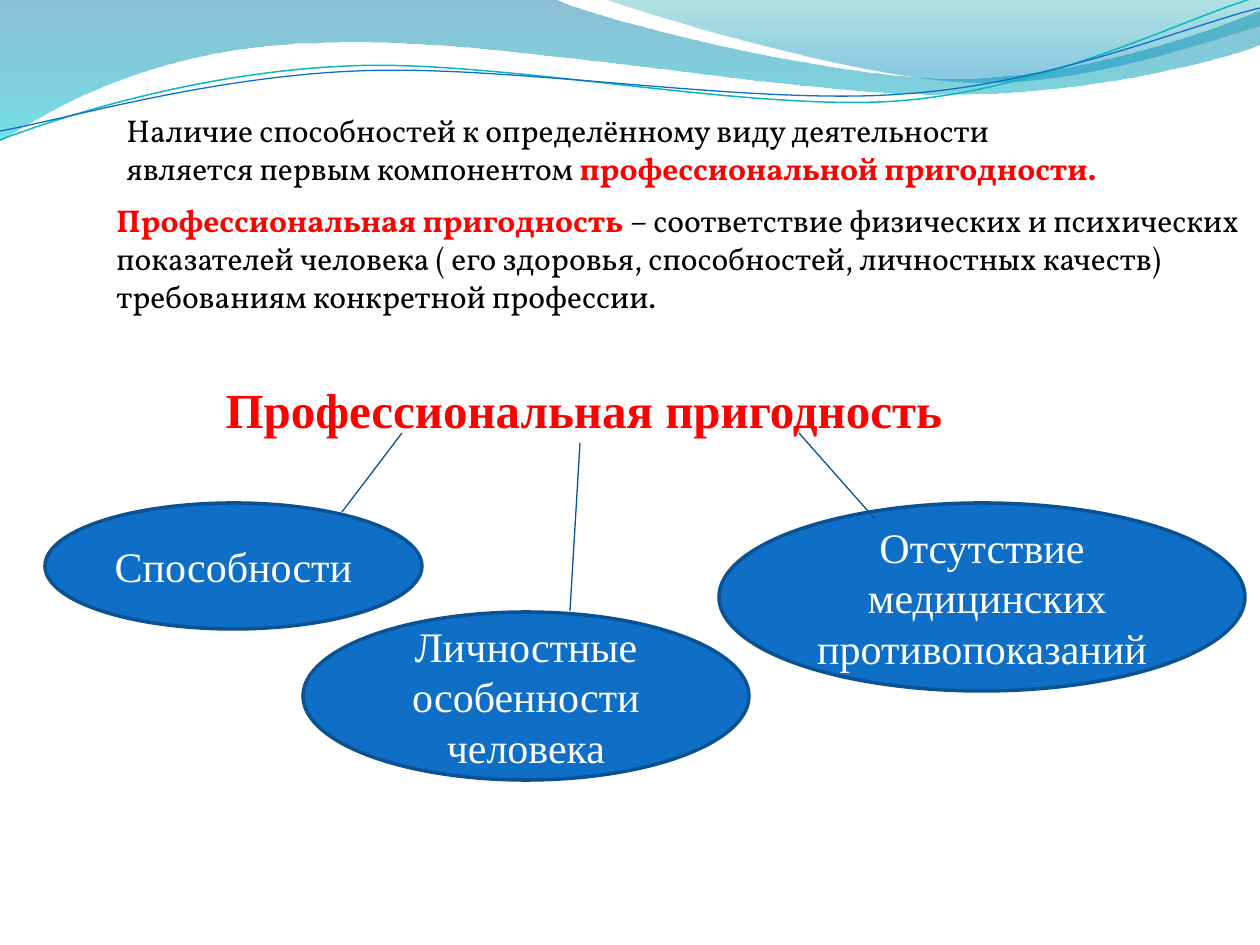
import math

import pptx
import pptx.dml.color
import pptx.enum.shapes
import pptx.enum.text
import pptx.oxml.ns
import pptx.util
from lxml import etree

PX = 914400 / 126
COLORS = {
    "ocean": "0074A1", "aqua": "00C6CF", "sea": "00A1A9", "sky": "008BBF",
    "teal": "0AB8BF", "blue": "0F6FC6", "edge": "0B5292", "link": "095295",
    "red": "FF0000", "black": "000000", "white": "FFFFFF",
}
SERIF, BODY = "Times New Roman", "Vollkorn"
TILT = 357.3


def px(n):
    """Turn px into EMU."""
    return pptx.util.Emu(round(n * PX))


def rgb(name):
    """Look up a named colour."""
    return pptx.dml.color.RGBColor.from_string(COLORS[name])


def place(sp, box):
    """Move and size a shape to a px box."""
    sp.left, sp.top, sp.width, sp.height = map(px, box)


def add_child(parent, tag, **attributes):
    """Append a drawing element with the given attributes."""
    child = etree.SubElement(parent, pptx.oxml.ns.qn("a:" + tag))
    for name, value in attributes.items():
        child.set(name, str(value))
    return child


def add_outline(s, box, steps, rotation=0):
    """Draw moves, lines and cubic curves as one freeform with the given box."""
    left, top, width, height = box
    builder = s.shapes.build_freeform(left, top, scale=PX)
    builder.add_line_segments([(left + width, top + height)], close=False)
    sp = builder.convert_to_shape()
    place(sp, box)
    sp.rotation = rotation
    sp.shadow.inherit = False
    outline = next(sp.element.spPr.iter(pptx.oxml.ns.qn("a:path")))
    outline.clear()
    outline.set("w", str(px(width)))
    outline.set("h", str(px(height)))
    angle = math.radians(-rotation)
    cos, sin = math.cos(angle), math.sin(angle)
    for tag, *values in steps:
        step = add_child(outline, tag)
        for x, y in zip(values[::2], values[1::2]):
            dx, dy = x - left - width / 2, y - top - height / 2
            add_child(step, "pt", x=px(width / 2 + dx * cos - dy * sin),
                      y=px(height / 2 + dx * sin + dy * cos))
    return sp


def add_wave(s, box, steps, stops):
    """Add a translucent wave with a downward gradient."""
    sp = add_outline(s, box, steps + [("close",)])
    sp.line.fill.background()
    sp.fill.gradient()
    sp.fill.gradient_angle = 270
    for stop, (position, color, alpha) in zip(sp.fill.gradient_stops, stops):
        stop.position = position
        stop.color.rgb = rgb(color)
    colors = sp.element.spPr.iter(pptx.oxml.ns.qn("a:srgbClr"))
    for clr, (position, color, alpha) in zip(colors, stops):
        add_child(clr, "alpha", val=alpha * 1000)


def add_curve(s, box, steps, color, width):
    """Add a thin tilted curve."""
    sp = add_outline(s, box, steps, TILT)
    sp.fill.background()
    sp.line.color.rgb = rgb(color)
    sp.line.width = pptx.util.Pt(width)


def add_header(s):
    """Add the waves and thin curves along the top."""
    add_wave(s, (-1, -1, 1263, 144), [
        ("moveTo", 0, 0),
        ("lnTo", 554, -1),
        ("cubicBezTo", 600, 21, 837, 79, 955, 79),
        ("cubicBezTo", 1075, 79, 1207, 33, 1260, 11),
        ("lnTo", 1261, 45),
        ("cubicBezTo", 1239, 55, 1096, 96, 940, 95),
        ("cubicBezTo", 784, 95, 481, 35, 324, 43),
        ("cubicBezTo", 163, 45, 58, 105, -1, 142),
        ("lnTo", 0, 0),
    ], [(0, "ocean", 45), (1, "aqua", 55)])
    add_wave(s, (604, -1, 656, 88), [
        ("moveTo", 604, -1),
        ("cubicBezTo", 642, 14, 859, 78, 969, 82),
        ("cubicBezTo", 1079, 87, 1211, 40, 1260, 26),
        ("lnTo", 1260, 0),
        ("lnTo", 604, -1),
    ], [(0, "sea", 30), (0.8, "sky", 45)])
    add_curve(s, (-3, 28, 1263, 89), [
        ("moveTo", 0, 140),
        ("cubicBezTo", 60, 117, 199, 72, 349, 66),
        ("cubicBezTo", 498, 59, 747, 112, 898, 101),
        ("cubicBezTo", 1050, 89, 1182, 19, 1257, -3),
    ], "teal", 0.85)
    add_curve(s, (-3, 38, 1264, 73), [
        ("moveTo", 0, 131),
        ("cubicBezTo", 59, 121, 207, 77, 357, 71),
        ("cubicBezTo", 508, 64, 752, 106, 903, 94),
        ("cubicBezTo", 1053, 84, 1186, 26, 1260, 8),
    ], "blue", 0.75)


def add_text(s, box, lines):
    """Add a text box of lines; each run is (text, is_key_term)."""
    tf = s.shapes.add_textbox(*map(px, box)).text_frame
    tf.word_wrap = True
    tf.auto_size = pptx.enum.text.MSO_AUTO_SIZE.SHAPE_TO_FIT_TEXT
    for i, runs in enumerate(lines):
        p = tf.paragraphs[0] if i == 0 else tf.add_paragraph()
        p.font.size = pptx.util.Pt(18)
        p.font.name = BODY
        for text, is_key in runs:
            r = p.add_run()
            r.text = text
            r.font.bold = is_key
            r.font.color.rgb = rgb("red" if is_key else "black")


def add_heading(s, box):
    """Fill the title placeholder with the diagram heading."""
    sp = s.shapes.title
    place(sp, box)
    tf = sp.text_frame
    tf.text = "Профессиональная пригодность"
    tf.auto_size = pptx.enum.text.MSO_AUTO_SIZE.SHAPE_TO_FIT_TEXT
    tf.vertical_anchor = pptx.enum.text.MSO_ANCHOR.TOP
    p = tf.paragraphs[0]
    p.alignment = pptx.enum.text.PP_ALIGN.LEFT
    p.font.size = pptx.util.Pt(28)
    p.font.name = SERIF
    p.font.bold = True
    p.font.color.rgb = rgb("red")


def add_component(s, box, text):
    """Add one labelled ellipse."""
    sp = s.shapes.add_shape(pptx.enum.shapes.MSO_SHAPE.OVAL, *map(px, box))
    sp.shadow.inherit = False
    sp.fill.solid()
    sp.fill.fore_color.rgb = rgb("blue")
    sp.line.color.rgb = rgb("edge")
    sp.line.width = pptx.util.Pt(2)
    tf = sp.text_frame
    tf.word_wrap = True
    tf.vertical_anchor = pptx.enum.text.MSO_ANCHOR.MIDDLE
    tf.text = text
    for p in tf.paragraphs:
        p.alignment = pptx.enum.text.PP_ALIGN.CENTER
        p.font.size = pptx.util.Pt(24)
        p.font.name = SERIF
        p.font.color.rgb = rgb("white")


def add_link(s, ends):
    """Add a thin line from the heading to an ellipse."""
    line = s.shapes.add_connector(pptx.enum.shapes.MSO_CONNECTOR.STRAIGHT, *map(px, ends))
    line.line.color.rgb = rgb("link")
    line.line.width = pptx.util.Pt(0.75)
    add_child(line.element.spPr, "effectLst")


def add_diagram(s, box):
    """Add the heading, its three components and their links."""
    left, top = box[:2]
    add_heading(s, (left + 169, top, 784, 72))
    components = [
        ((1, 130, 377, 126), "Способности"),
        ((259, 239, 446, 168), "Личностные особенности человека"),
        ((675, 130, 526, 188), "Отсутствие\n медицинских\nпротивопоказаний"),
    ]
    for (x, y, w, h), text in components:
        add_component(s, (left + x, top + y, w, h), text)
    for x1, y1, x2, y2 in [(755, 60, 831, 146), (536, 70, 526, 238), (358, 60, 298, 139)]:
        add_link(s, (left + x1, top + y1, left + x2, top + y2))


def main():
    """Build and save the slide."""
    prs = pptx.Presentation()
    prs.slide_width, prs.slide_height = px(1260), px(945)
    s = prs.slides.add_slide(prs.slide_layouts[5])
    add_header(s)
    add_text(s, (114, 105, 1055, 89), [
        [("Наличие способностей к определённому виду деятельности", False)],
        [("является первым компонентом ", False), ("профессиональной пригодности.", True)],
    ])
    add_text(s, (104, 195, 1289, 127), [
        [("Профессиональная пригодность ", True),
         ("– соответствие физических и психических", False)],
        [("показателей человека ( его здоровья, способностей, личностных качеств)", False)],
        [("требованиям конкретной профессии.", False)],
    ])
    add_diagram(s, (44, 373, 1201, 407))
    prs.save("out.pptx")


if __name__ == "__main__":
    main()
